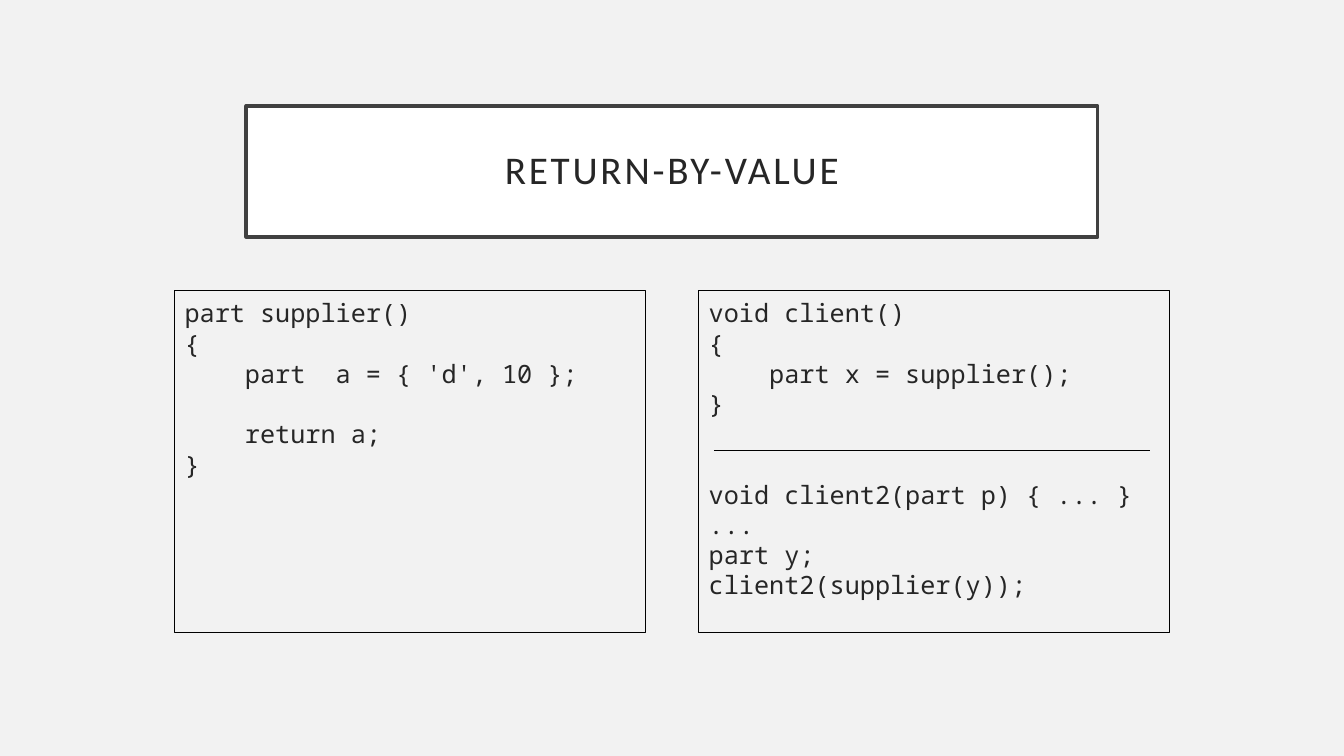
from dataclasses import dataclass

from pptx import Presentation
from pptx.dml.color import RGBColor as Rgb
from pptx.enum.shapes import MSO_CONNECTOR as Connector
from pptx.enum.text import MSO_ANCHOR as Anchor, MSO_AUTO_SIZE as AutoSize, PP_ALIGN as Align
from pptx.oxml.ns import qn
from pptx.util import Cm, Pt
from lxml.etree import SubElement

TITLE = "RETURN-BY-VALUE"
PANELS = [
    [
        (0, "part supplier()"),
        (0, "{"),
        (0, "    part  a = { 'd', 10 };"),
        (1, "    return a;"),
        (0, "}"),
    ],
    [
        (0, "void client()"),
        (0, "{"),
        (0, "    part x = supplier();"),
        (0, "}"),
        (2, "void client2(part p) { ... }"),
        (0, "..."),
        (0, "part y;"),
        (0, "client2(supplier(y));"),
    ],
]


@dataclass(frozen=True)
class Theme:
    paper: Rgb = Rgb(0xF2, 0xF2, 0xF2)
    white: Rgb = Rgb(0xFF, 0xFF, 0xFF)
    frame: Rgb = Rgb(0x40, 0x40, 0x40)
    ink: Rgb = Rgb(0x26, 0x26, 0x26)
    rule: Rgb = Rgb(0, 0, 0)
    title_font: str = "Calibri"
    code_font: str = "Noto Sans Mono"
    title_size: float = 28
    code_size: float = 18
    code_pitch: float = 21.6


THEME = Theme()
PAGE_WIDTH, PAGE_HEIGHT = Cm(33.87), Cm(19.05)
TITLE_TOP, TITLE_WIDTH, TITLE_HEIGHT = Cm(2.67), Cm(21.46), Cm(3.3)
PANEL_TOP, PANEL_WIDTH, PANEL_HEIGHT = Cm(7.32), Cm(11.86), Cm(8.61)
PANEL_GAP = Cm(1.35)
DIVIDER_TOP, DIVIDER_INDENT, DIVIDER_WIDTH = Cm(11.35), Cm(0.38), Cm(11)


def apply(target, values):
    for name, value in values.items():
        setattr(target, name, value)


def place(box, left, top, width, height):
    apply(box, dict(left=left, top=top, width=width, height=height))


def outline(shape, color, width):
    shape.line.color.rgb = color
    shape.line.width = Pt(width)


def write(para, text, font, size):
    span = para.add_run()
    span.text = text
    apply(span.font, dict(name=font, size=Pt(size), bold=False))
    span.font.color.rgb = THEME.ink
    return span


def add_title(page):
    box = page.shapes.title
    place(box, (PAGE_WIDTH - TITLE_WIDTH) // 2, TITLE_TOP, TITLE_WIDTH, TITLE_HEIGHT)
    box.fill.solid()
    box.fill.fore_color.rgb = THEME.white
    outline(box, THEME.frame, 2.5)
    sides = ("left", "top", "right", "bottom")
    apply(box.text_frame, {f"margin_{side}": Cm(0.51) for side in sides})
    apply(box.text_frame, dict(
        vertical_anchor=Anchor.MIDDLE, word_wrap=True, auto_size=AutoSize.NONE))
    para = box.text_frame.paragraphs[0]
    apply(para, dict(alignment=Align.CENTER, line_spacing=0.9))
    span = write(para, TITLE, THEME.title_font, THEME.title_size)
    span.font._element.set("spc", "200")


def add_panel(box, left, lines):
    place(box, left, PANEL_TOP, PANEL_WIDTH, PANEL_HEIGHT)
    outline(box, THEME.rule, 0.75)
    frame = box.text_frame
    apply(frame, dict(
        margin_left=Cm(0.25), margin_right=Cm(0.25), margin_top=Cm(0.18),
        margin_bottom=Cm(0.13), vertical_anchor=Anchor.TOP,
        word_wrap=True, auto_size=AutoSize.NONE))
    for index, (gap, text) in enumerate(lines):
        para = frame.add_paragraph() if index else frame.paragraphs[0]
        apply(para, dict(
            alignment=Align.LEFT, line_spacing=Pt(THEME.code_pitch),
            space_before=Pt(gap * THEME.code_pitch), space_after=Pt(0)))
        properties = para._p.get_or_add_pPr()
        properties.set("marL", "0")
        properties.set("indent", "0")
        SubElement(properties, qn("a:buNone"))
        write(para, text, THEME.code_font, THEME.code_size)


def add_divider(page, left):
    line = page.shapes.add_connector(
        Connector.STRAIGHT, left, DIVIDER_TOP, left + DIVIDER_WIDTH, DIVIDER_TOP)
    outline(line, THEME.rule, 0.5)
    SubElement(line._element.spPr, qn("a:effectLst"))


def main():
    deck = Presentation()
    apply(deck, dict(slide_width=PAGE_WIDTH, slide_height=PAGE_HEIGHT))
    page = deck.slides.add_slide(deck.slide_layouts.get_by_name("Two Content"))
    page.background.fill.solid()
    page.background.fill.fore_color.rgb = THEME.paper
    add_title(page)
    first_left = (PAGE_WIDTH - 2 * PANEL_WIDTH - PANEL_GAP) // 2
    lefts = [first_left + column * (PANEL_WIDTH + PANEL_GAP) for column in range(2)]
    bodies = list(page.placeholders)[1:]
    for box, left, lines in zip(bodies, lefts, PANELS):
        add_panel(box, left, lines)
    add_divider(page, lefts[1] + DIVIDER_INDENT)
    deck.save("out.pptx")


if __name__ == "__main__":
    main()
